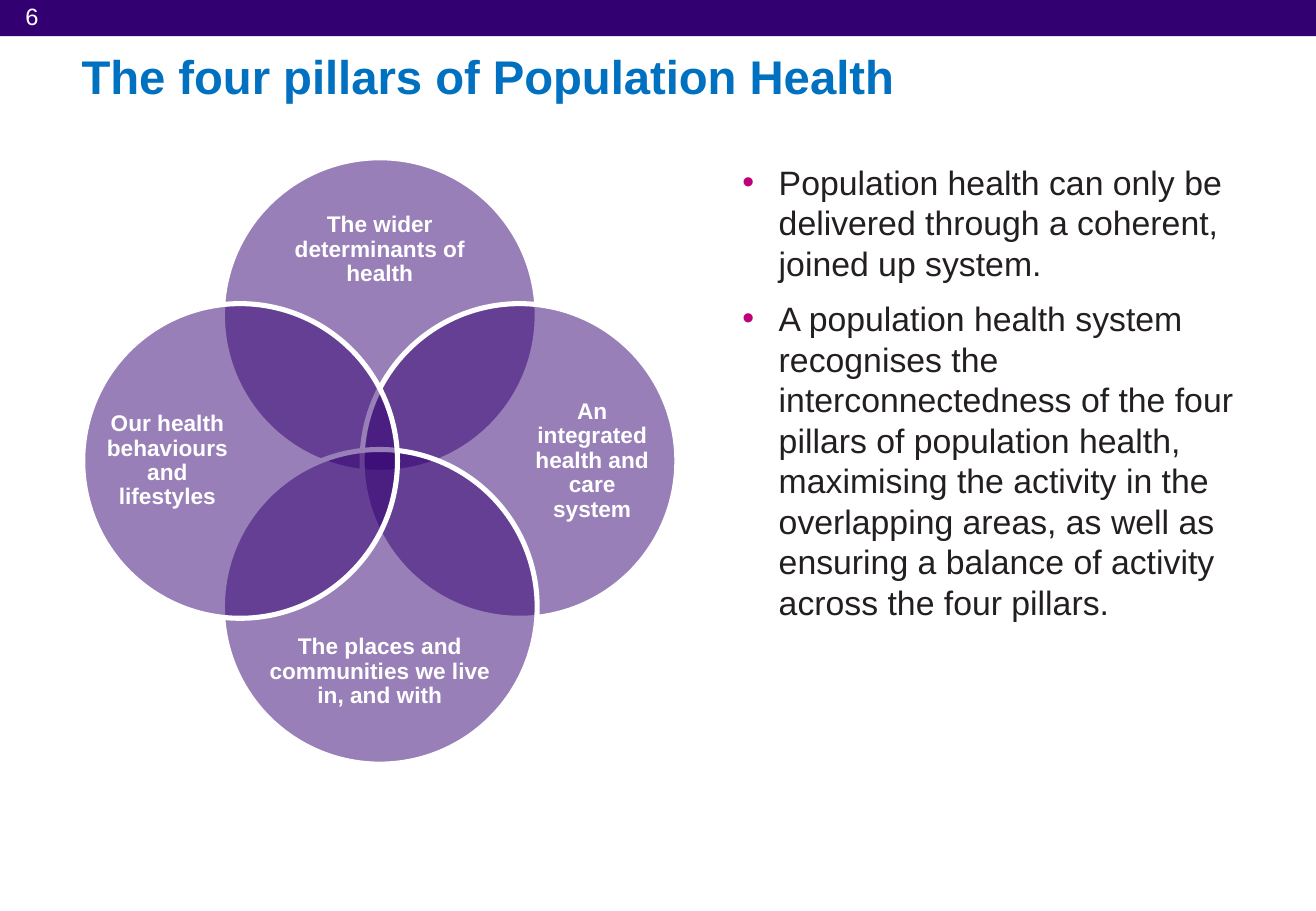
from lxml.etree import SubElement
from pptx import Presentation
from pptx.dml.color import RGBColor
from pptx.enum.shapes import MSO_SHAPE
from pptx.enum.text import MSO_ANCHOR, PP_ALIGN
from pptx.oxml.ns import qn
from pptx.util import Cm, Pt

FONT = "Arial"
PURPLE, WHITE, BLUE, PINK, INK = "330072", "FFFFFF", "0070C0", "BD007A", "231F20"

# Text, direction from the centre of the diagram (x, y)
PILLARS = [
    ("The wider determinants of health", 0, -1),
    ("An integrated health and care system", 1, 0),
    ("The places and communities we live in, and with", 0, 1),
    ("Our health behaviours and lifestyles", -1, 0),
]
POINTS = [
    "Population health can only be delivered through a coherent, joined up system.",
    "A population health system recognises the interconnectedness of the four "
    "pillars of population health, maximising the activity in the overlapping "
    "areas, as well as ensuring a balance of activity across the four pillars.",
]


def color(value):
    return RGBColor.from_string(value)


def style(paragraph, size, value, bold=False):
    for run in paragraph.runs:
        run.font.name = FONT
        run.font.size = Pt(size)
        run.font.bold = bold
        run.font.color.rgb = color(value)


def add_text_box(shapes, left, top, width, height):
    box = shapes.add_textbox(Cm(left), Cm(top), Cm(width), Cm(height))
    box.text_frame.word_wrap = True
    return box


def add_header(slide, left, top, width, height):
    # Band with the page number
    band = slide.shapes.add_shape(
        MSO_SHAPE.RECTANGLE, Cm(left), Cm(top), Cm(width), Cm(height))
    band.shadow.inherit = False
    band.fill.solid()
    band.fill.fore_color.rgb = color(PURPLE)
    band.line.fill.background()
    number = add_text_box(slide.shapes, left + 0.28, top - 0.08, 1.4, 0.86)
    number.text_frame.text = "6"
    style(number.text_frame.paragraphs[0], 14, WHITE)


def add_title(slide, left, top, width, height):
    title = slide.shapes.title
    title.left, title.top, title.width, title.height = map(
        Cm, (left, top, width, height))
    frame = title.text_frame
    frame.text = "The four pillars of Population Health"
    frame.vertical_anchor = MSO_ANCHOR.TOP
    frame.paragraphs[0].alignment = PP_ALIGN.LEFT
    style(frame.paragraphs[0], 28, BLUE, bold=True)


def add_circle(shapes, center_x, center_y, diameter):
    circle = shapes.add_shape(
        MSO_SHAPE.OVAL, Cm(center_x - diameter / 2), Cm(center_y - diameter / 2),
        Cm(diameter), Cm(diameter))
    circle.shadow.inherit = False
    circle.fill.solid()
    circle.fill.fore_color.rgb = color(PURPLE)
    # Half transparent, so that the overlaps darken
    fill_color = circle.fill._xPr.find(qn("a:solidFill"))[0]
    SubElement(fill_color, qn("a:alpha"), val="50000")
    circle.line.color.rgb = color(WHITE)
    circle.line.width = Pt(3)


def add_label(shapes, text, center_x, center_y, width, height):
    label = add_text_box(
        shapes, center_x - width / 2, center_y - height / 2, width, height)
    frame = label.text_frame
    frame.margin_left = frame.margin_right = 0
    frame.margin_top = frame.margin_bottom = 0
    frame.vertical_anchor = MSO_ANCHOR.MIDDLE
    frame.text = text
    paragraph = frame.paragraphs[0]
    paragraph.alignment = PP_ALIGN.CENTER
    paragraph.line_spacing = 0.9
    style(paragraph, 13.4, WHITE, bold=True)


def add_venn(slide, left, top, width, height):
    diameter = 6.58
    reach_x, reach_y = (width - diameter) / 2, (height - diameter) / 2
    group = slide.shapes.add_group_shape()
    for text, x, y in PILLARS:
        center_x = left + width / 2 + x * reach_x
        center_y = top + height / 2 + y * reach_y
        add_circle(group.shapes, center_x, center_y, diameter)
        # Labels sit towards the outer edge of their circle
        label_size = (2.54, 5.05) if x else (5.05, 2.08)
        add_label(group.shapes, text, center_x + x * 1.52, center_y + y * 1.36,
                  *label_size)


def add_bullet(paragraph):
    properties = paragraph._p.get_or_add_pPr()
    properties.set("marL", str(Cm(0.76)))
    properties.set("indent", str(-Cm(0.76)))
    bullet_color = SubElement(properties, qn("a:buClr"))
    SubElement(bullet_color, qn("a:srgbClr"), val=PINK)
    SubElement(properties, qn("a:buFont"), typeface=FONT)
    SubElement(properties, qn("a:buChar"), char="•")


def add_points(slide, left, top, width, height):
    frame = add_text_box(slide.shapes, left, top, width, height).text_frame
    frame.text = "\n".join(POINTS)
    for index, paragraph in enumerate(frame.paragraphs):
        add_bullet(paragraph)
        paragraph.space_before = Pt(4 if index else 0)
        paragraph.space_after = Pt(4.9)
        style(paragraph, 20, INK)


def main():
    presentation = Presentation()
    presentation.slide_width, presentation.slide_height = Cm(27.51), Cm(19.05)
    slide = presentation.slides.add_slide(presentation.slide_layouts[5])
    add_header(slide, 0, 0, 27.51, 0.76)
    add_title(slide, 1.45, 0.86, 22.5, 1.45)
    add_venn(slide, 1.73, 3.3, 12.42, 12.68)
    add_points(slide, 15.27, 3.25, 10.9, 13.92)
    presentation.save("out.pptx")


if __name__ == "__main__":
    main()
